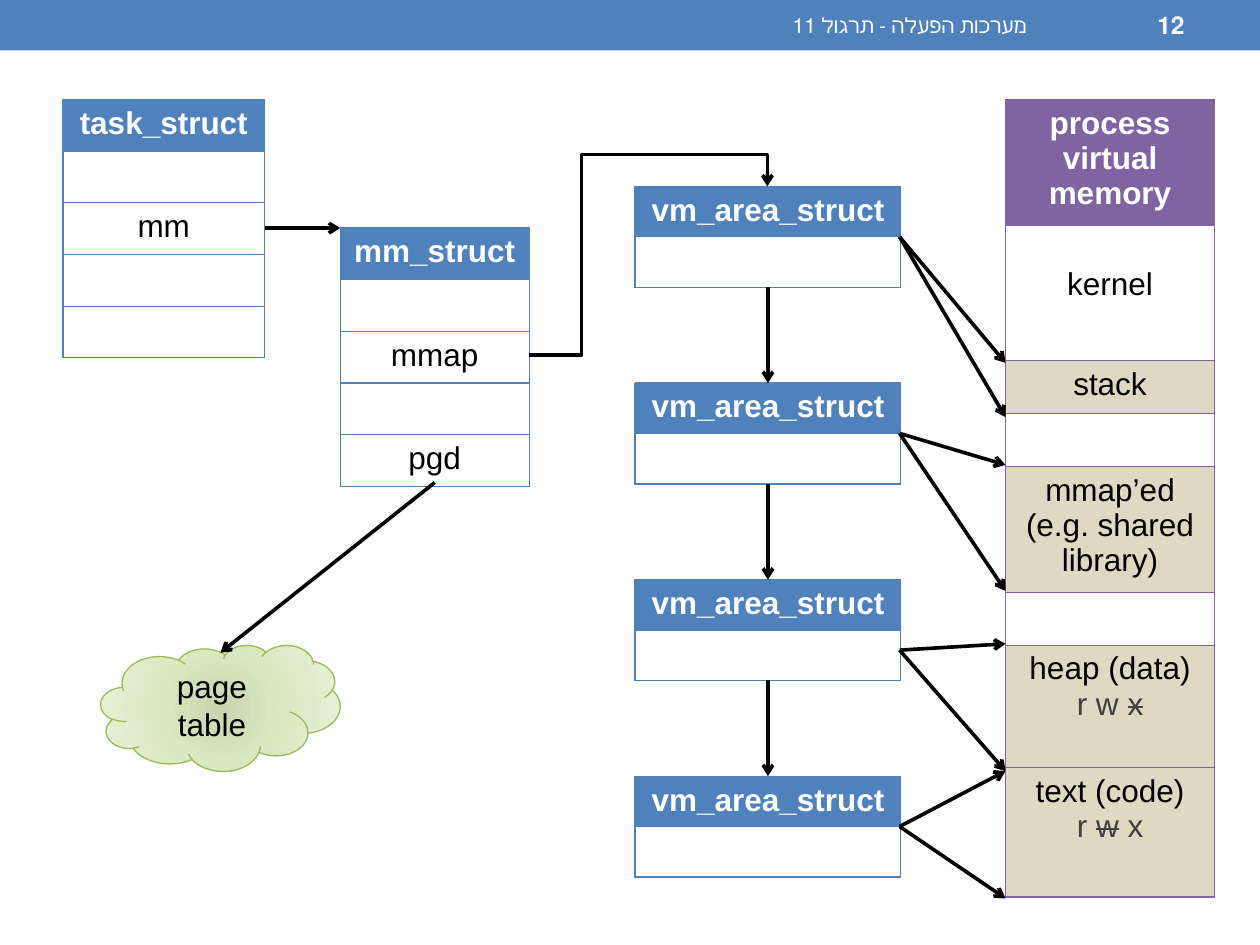
from dataclasses import dataclass
from itertools import pairwise

from lxml import etree
from pptx import Presentation
from pptx import util as u
from pptx.dml.color import RGBColor
from pptx.enum import shapes, text
from pptx.oxml import ns, parse_xml

Inches = u.Inches


@dataclass(frozen=True)
class Theme:
    font: str = "Arial"
    blue: str = "4F81BD"
    purple: str = "8064A2"
    sand: str = "DDD9C3"
    white: str = "FFFFFF"
    black: str = "000000"
    gray: str = "404040"
    green: str = "9BBB59"
    cloud_stops: tuple = ((0, "C8D7B2"), (45, "D8E8C0"), (100, "E9F3DC"))
    body: int = 18
    footer: int = 12
    number: int = 14
    border: float = 0.75
    arrow: float = 2.08


THEME = Theme()


def rgb(color):
    return RGBColor.from_string(color)


def style(paragraph, color, size=THEME.body, bold=False, align=text.PP_ALIGN.CENTER):
    paragraph.alignment = align
    paragraph.font.name = THEME.font
    paragraph.font.size = u.Pt(size)
    paragraph.font.bold = bold
    paragraph.font.color.rgb = rgb(color)


def add_cell_borders(cell, color):
    properties = cell._tc.get_or_add_tcPr()
    for position, side in enumerate(("lnL", "lnR", "lnT", "lnB")):
        border = etree.Element(ns.qn(f"a:{side}"), w=str(u.Pt(THEME.border)))
        fill = etree.SubElement(border, ns.qn("a:solidFill"))
        etree.SubElement(fill, ns.qn("a:srgbClr"), val=color)
        properties.insert(position, border)


def add_struct(slide, left, top, width, heights, labels, accent, shaded=()):
    frame = slide.shapes.add_table(len(labels), 1, Inches(left), Inches(top),
                                   Inches(width), Inches(sum(heights)))
    table = frame.table
    table.horz_banding = False
    for index, (height, label) in enumerate(zip(heights, labels)):
        table.rows[index].height = Inches(height)
        cell = table.cell(index, 0)
        header = index == 0
        cell.text = label
        style(cell.text_frame.paragraphs[0],
              THEME.white if header else THEME.black, bold=header)
        cell.fill.solid()
        fill = accent if header else THEME.sand if index in shaded else THEME.white
        cell.fill.fore_color.rgb = rgb(fill)
        add_cell_borders(cell, accent)
    return table


def add_permissions(cell, denied):
    permissions = cell.text_frame.add_paragraph()
    style(permissions, THEME.gray)
    before, after = "r w x".split(denied)
    for part in filter(None, (before, denied, after)):
        run = permissions.add_run()
        run.text = part
        if part == denied:
            run._r.get_or_add_rPr().set("strike", "sngStrike")


def add_arrow(slide, start, end, kind=shapes.MSO_CONNECTOR.STRAIGHT):
    arrow = slide.shapes.add_connector(kind, *map(Inches, (*start, *end)))
    arrow.line.color.rgb = rgb(THEME.black)
    arrow.line.width = u.Pt(THEME.arrow)
    etree.SubElement(arrow.line._get_or_add_ln(), ns.qn("a:tailEnd"), type="arrow")
    etree.SubElement(arrow._element.spPr, ns.qn("a:effectLst"))
    return arrow


def add_bent_arrow(slide, start, end, bends):
    arrow = add_arrow(slide, start, end, shapes.MSO_CONNECTOR.ELBOW)
    geometry = arrow._element.spPr.find(ns.qn("a:prstGeom"))
    geometry.set("prst", "bentConnector4")
    guides = geometry.find(ns.qn("a:avLst"))
    for number, bend in enumerate(bends, 1):
        etree.SubElement(guides, ns.qn("a:gd"), name=f"adj{number}",
                         fmla=f"val {round(bend * 100000)}")


def add_header_text(slide, left, width, words, size, bold=False):
    box = slide.shapes.add_textbox(Inches(left), Inches(0.02), Inches(width), Inches(0.36))
    frame = box.text_frame
    frame.word_wrap = True
    frame.vertical_anchor = text.MSO_ANCHOR.MIDDLE
    frame.text = words
    paragraph = frame.paragraphs[0]
    style(paragraph, THEME.white, size, bold, text.PP_ALIGN.RIGHT)
    paragraph._p.get_or_add_pPr().set("rtl", "1")


def add_header_bar(slide):
    bar = slide.shapes.add_shape(shapes.MSO_SHAPE.RECTANGLE, 0, 0, Inches(10), Inches(0.4))
    bar.shadow.inherit = False
    bar.fill.solid()
    bar.fill.fore_color.rgb = rgb(THEME.blue)
    bar.line.fill.background()


def add_cloud(slide, left, top, width, height, words):
    cloud = slide.shapes.add_shape(shapes.MSO_SHAPE.CLOUD,
                                   *map(Inches, (left, top, width, height)))
    cloud.shadow.inherit = False
    cloud.line.color.rgb = rgb(THEME.green)
    cloud.line.width = u.Pt(THEME.border)
    stops = "".join(f'<a:gs pos="{position * 1000}"><a:srgbClr val="{color}"/></a:gs>'
                    for position, color in THEME.cloud_stops)
    gradient = parse_xml(
        f'<a:gradFill {ns.nsdecls("a")}><a:gsLst>{stops}</a:gsLst><a:path path="circle">'
        '<a:fillToRect l="50000" t="50000" r="50000" b="50000"/></a:path></a:gradFill>')
    cloud._element.spPr.find(ns.qn("a:prstGeom")).addnext(gradient)
    cloud.text_frame.word_wrap = True
    cloud.text_frame.vertical_anchor = text.MSO_ANCHOR.MIDDLE
    cloud.text_frame.text = words
    style(cloud.text_frame.paragraphs[0], THEME.black)


def add_process_memory(slide):
    labels = ("process virtual memory", "kernel", "stack", "", "mmap’ed (e.g. shared library)",
              "", "heap (data)", "text (code)")
    heights = (1, 1.07, 0.42, 0.42, 1, 0.42, 0.97, 1.03)
    memory = add_struct(slide, 7.98, 0.79, 1.66, heights, labels, THEME.purple, (2, 4, 6, 7))
    memory.cell(1, 0).margin_top = Inches(0.33)
    add_permissions(memory.cell(6, 0), denied="x")
    add_permissions(memory.cell(7, 0), denied="w")


def add_vm_areas(slide):
    left, width, height = 5.04, 2.11, 0.8
    middle = left + width / 2
    tops = [1.48 + 1.56 * index for index in range(4)]
    for top in tops:
        add_struct(slide, left, top, width, (0.38, 0.38), ("vm_area_struct", ""), THEME.blue)
    for upper, lower in pairwise(tops):
        add_arrow(slide, (middle, upper + height), (middle, lower))
    regions = ((1.88, (2.88, 3.31)), (3.44, (3.69, 4.69)),
               (5.16, (5.11, 6.12)), (6.56, (6.12, 7.13)))
    for source, bounds in regions:
        for bound in bounds:
            add_arrow(slide, (7.14, source), (7.98, bound))


def main():
    deck = Presentation()
    deck.slide_width, deck.slide_height = Inches(10), Inches(7.5)
    slide = deck.slides.add_slide(deck.slide_layouts[6])
    add_header_bar(slide)
    add_header_text(slide, 3.75, 4.5, "מערכות הפעלה - תרגול 11", THEME.footer)
    add_header_text(slide, 8.33, 1.17, "12", THEME.number, bold=True)
    rows = (0.41,) * 5
    add_struct(slide, 0.5, 0.79, 1.6, rows, ("task_struct", "", "mm", "", ""), THEME.blue)
    add_struct(slide, 2.7, 1.81, 1.5, rows, ("mm_struct", "", "mmap", "", "pgd"), THEME.blue)
    add_process_memory(slide)
    add_vm_areas(slide)
    add_cloud(slide, 0.8, 5.12, 1.9, 1, "page table")
    add_arrow(slide, (2.1, 1.81), (2.7, 1.81))
    add_bent_arrow(slide, (4.2, 2.82), (6.09, 1.48), (0.22, 1.19))
    add_arrow(slide, (3.45, 3.83), (1.75, 5.18))
    deck.save("out.pptx")


if __name__ == "__main__":
    main()
